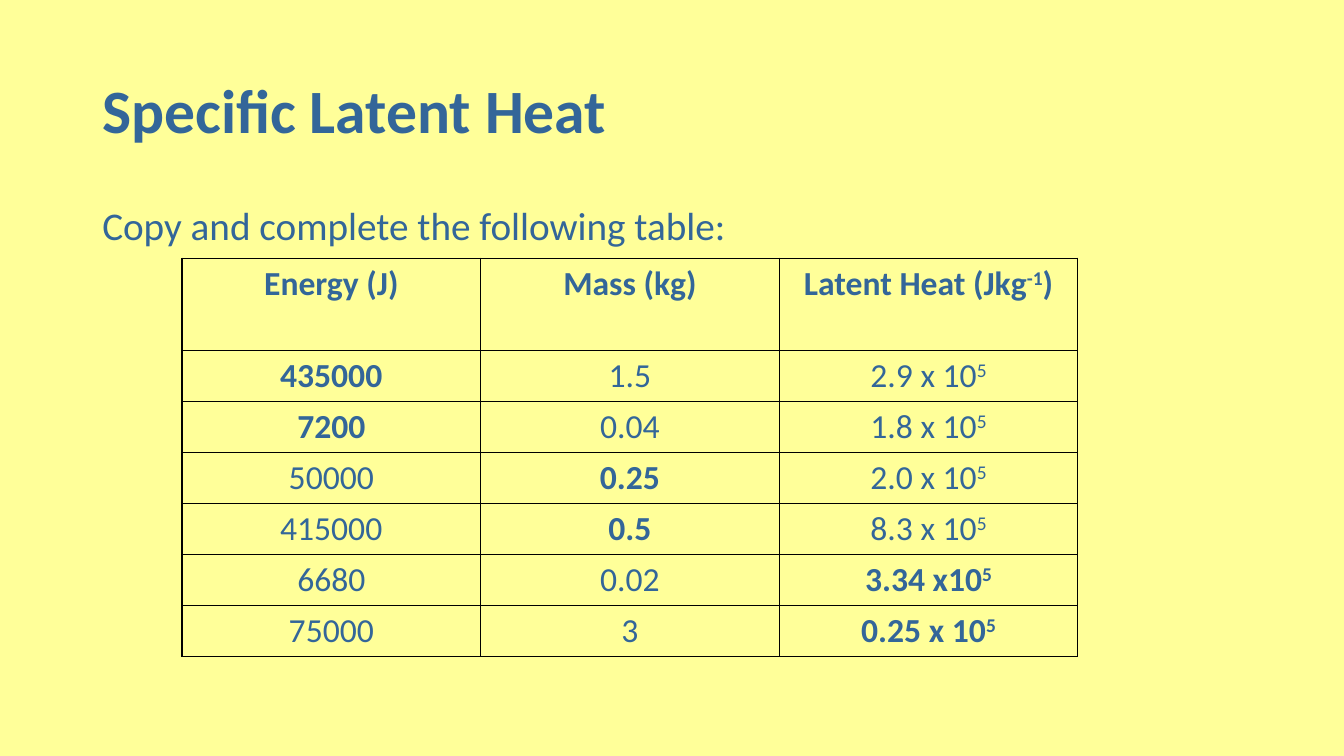
from lxml import etree
from pptx import Presentation
from pptx.dml.color import RGBColor
from pptx.enum import text
from pptx.oxml import ns
from pptx.util import Pt

HUES = {"paper": "FFFF99", "ink": "336699", "rule": "000000"}
FACE = "Calibri"

# Cell text: "*" in front marks bold, "^" wraps a superscript
ROWS = [
    ["*Energy (J)", "*Mass (kg)", "*Latent Heat (Jkg^-1^)"],
    ["*435000", "1.5", "2.9 x 10^5^"],
    ["*7200", "0.04", "1.8 x 10^5^"],
    ["50000", "*0.25", "2.0 x 10^5^"],
    ["415000", "*0.5", "8.3 x 10^5^"],
    ["6680", "0.02", "*3.34 x10^5^"],
    ["75000", "3", "*0.25 x 10^5^"],
]


def hue(name):
    return RGBColor.from_string(HUES[name])


def style(para, size, bold=False):
    font = para.font
    font.name, font.size, font.bold = FACE, Pt(size), bold
    font.color.rgb = hue("ink")


def label(slide, box, words, size, bold, anchor):
    frame = slide.shapes.add_textbox(*map(Pt, box)).text_frame
    frame.word_wrap = True
    frame.vertical_anchor = anchor
    para = frame.paragraphs[0]
    para.text = words
    para.line_spacing = 0.9
    style(para, size, bold)


def border(cell):
    props = cell._tc.get_or_add_tcPr()
    for n, side in enumerate(("lnL", "lnR", "lnT", "lnB")):
        line = etree.Element(ns.qn("a:" + side), w=str(Pt(1)))
        fill = etree.SubElement(line, ns.qn("a:solidFill"))
        etree.SubElement(fill, ns.qn("a:srgbClr"), val=HUES["rule"])
        props.insert(n, line)


def write(cell, words):
    cell.fill.background()
    border(cell)
    para = cell.text_frame.paragraphs[0]
    para.alignment = text.PP_ALIGN.CENTER
    style(para, 24, words.startswith("*"))
    for n, part in enumerate(words.lstrip("*").split("^")):
        if part:
            run = para.add_run()
            run.text = part
            if n % 2:
                run.font._element.set("baseline", "30000")


def grid(slide, box, rows, head):
    left, top, width, height = box
    count = len(rows[0])
    table = slide.shapes.add_table(len(rows), count, *map(Pt, box)).table
    table.first_row = table.horz_banding = False
    for col in table.columns:
        col.width = Pt(width / count)
    for r, row in enumerate(rows):
        table.rows[r].height = Pt(head if r == 0 else (height - head) / (len(rows) - 1))
        for c, words in enumerate(row):
            write(table.cell(r, c), words)


def build(slide, box):
    left, top, width, height = box
    slide.background.fill.solid()
    slide.background.fill.fore_color.rgb = hue("paper")
    # Title
    label(slide, (left, top, width, 104.4), "Specific Latent Heat",
          44, True, text.MSO_ANCHOR.MIDDLE)
    # Task
    label(slide, (left, top + 115.2, width, height - 115.2),
          "Copy and complete the following table:", 28, False, text.MSO_ANCHOR.TOP)
    # Table of values
    grid(slide, (left + 64, top + 155.7, 640, 284.7), ROWS, 65.7)


def main():
    deck = Presentation()
    deck.slide_width, deck.slide_height = Pt(960), Pt(540)
    build(deck.slides.add_slide(deck.slide_layouts[6]), (66, 28.8, 828, 458))
    deck.save("out.pptx")


if __name__ == "__main__":
    main()
